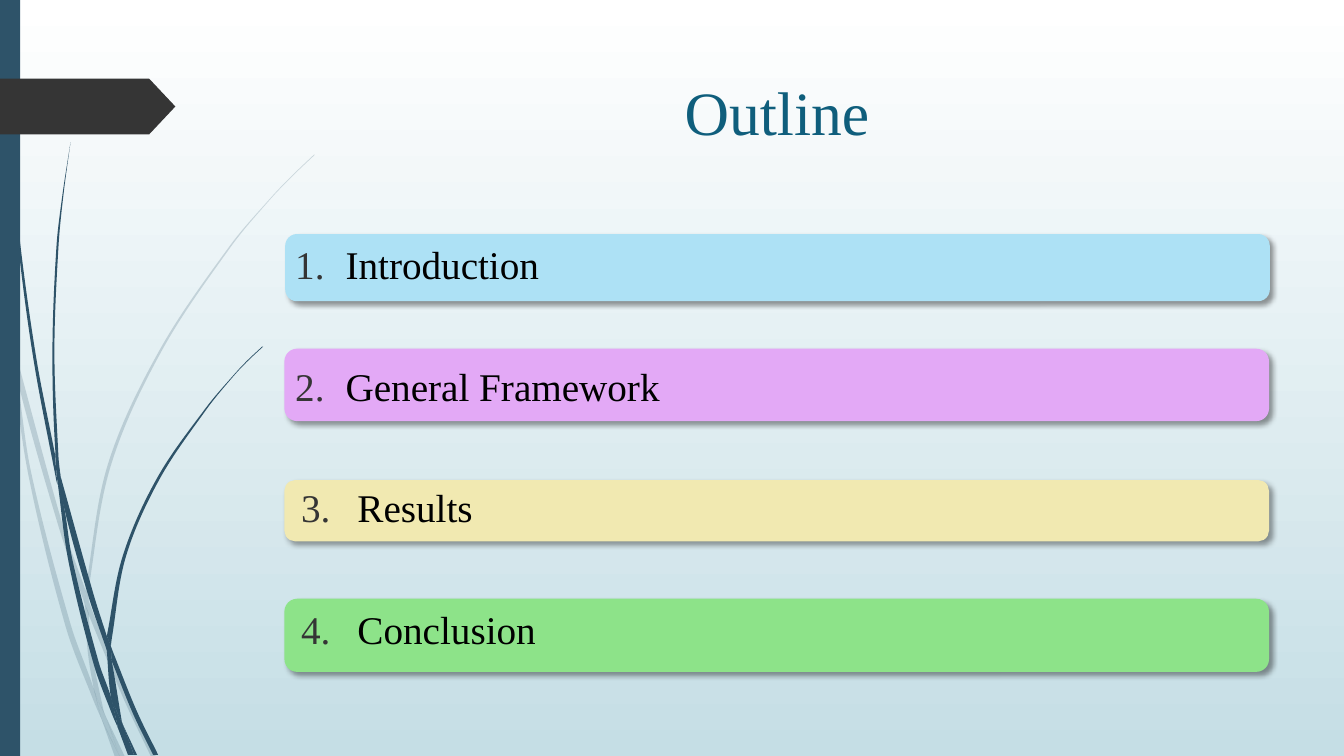
import math

import lxml.etree
import pptx
import pptx.dml.color
import pptx.enum.shapes
import pptx.enum.text
import pptx.oxml
import pptx.oxml.ns
import pptx.util

Cm = pptx.util.Cm
Pt = pptx.util.Pt
SHAPES = pptx.enum.shapes.MSO_SHAPE
qn = pptx.oxml.ns.qn

COLORS = {
    "sky": "FFFFFF", "mist": "C5DEE5", "stem": "2E5369", "tag": "353535",
    "title": "0F5E7C", "text": "000000", "shadow": "000000",
    "blue": "ADE1F5", "violet": "E3A9F6", "sand": "F1E9B1", "green": "8DE389",
}
TOPICS = ["Introduction", "General Framework", "Results", "Conclusion"]
BANDS = [
    ("blue", 7.21, 5.92, 1.65), ("violet", 7.19, 8.81, 1.78),
    ("sand", 7.19, 12.12, 1.5), ("green", 7.19, 15.11, 1.8),
]
INDENTS = [(1.27, 1.27), (1.27, 1.27), (1.57, 1.42), (1.57, 1.42)]
BLADE_UNIT = Cm(0.0254)
PALE_BLADES = [
    ([(0, 299), (10, 344), (11, 350)], [(0, 282), (9, 322), (11, 350)]),
    ([(14, 345), (17, 376), (58, 522), (84, 599)], [(14, 345), (62, 520), (85, 586)]),
    ([(88, 610), (123, 694), (150, 751)], [(88, 596), (92, 607), (127, 692), (155, 751)]),
    ([(105, 711), (119, 751)], [(105, 711), (124, 751)]),
    ([(11, 350), (28, 470), (65, 621), (92, 693), (101, 714)],
     [(11, 350), (17, 376), (31, 469), (70, 619), (93, 683), (99, 707), (101, 714)]),
    ([(84, 599), (87, 646), (93, 683), (96, 692), (105, 711)],
     [(88, 608), (91, 646), (103, 706), (105, 711)]),
    ([(312, 153), (289, 175), (268, 197), (228, 244), (158, 348), (107, 461), (85, 584), (85, 586)],
     [(312, 154), (290, 175), (268, 198), (229, 245), (160, 349), (110, 462), (88, 584), (88, 596)]),
    ([(101, 714), (114, 751)], [(101, 714), (119, 751)]),
    ([(85, 586), (84, 599)], [(88, 596), (88, 610)]),
    ([(93, 683), (99, 707), (101, 714), (119, 751)], [(93, 683), (96, 692), (105, 711), (119, 751)]),
]
DARK_BLADES = [
    ([(3, 0), (4, 48), (7, 110), (17, 233), (33, 355), (56, 477), (57, 481)],
     [(4, 0), (5, 48), (8, 109), (19, 232), (36, 355), (55, 453), (55, 457), (57, 481)]),
    ([(60, 472), (64, 505), (88, 592), (106, 645)], [(60, 472), (93, 590), (106, 631)]),
    ([(111, 656), (132, 708), (152, 749)], [(110, 641), (113, 649), (136, 706), (157, 749)]),
    ([(57, 477), (68, 557), (93, 659), (111, 708), (117, 722)],
     [(57, 477), (64, 505), (72, 556), (98, 657), (110, 691), (116, 717), (117, 722)]),
    ([(70, 141), (62, 193), (56, 245), (52, 349), (55, 449), (60, 472)],
     [(70, 141), (63, 193), (58, 245), (54, 349), (58, 453), (60, 472)]),
    ([(122, 719), (133, 749)], [(122, 719), (136, 749)]),
    ([(55, 449), (55, 453), (57, 477), (64, 505)], [(55, 449), (60, 472), (64, 505)]),
    ([(260, 344), (245, 358), (231, 373), (204, 405), (156, 474), (122, 551), (106, 631)],
     [(261, 344), (245, 359), (231, 374), (205, 406), (158, 476), (125, 552), (111, 633), (110, 641)]),
    ([(117, 722), (127, 749)], [(117, 722), (131, 749)]),
    ([(106, 645), (110, 691), (116, 706), (122, 719)],
     [(106, 645), (109, 651), (111, 656), (121, 716), (122, 719)]),
    ([(106, 631), (106, 645), (111, 656)], [(106, 631), (110, 641), (111, 656)]),
    ([(110, 691), (116, 717), (117, 722), (130, 749)], [(110, 691), (116, 706), (122, 719), (133, 749)]),
]


def handle(before, node, after, reach):
    dx, dy = after[0] - before[0], after[1] - before[1]
    ratio = reach / 3 / math.hypot(dx, dy)
    return node[0] + dx * ratio, node[1] + dy * ratio


class OutlineSlide:
    def __init__(self, deck, font_name):
        self.slide = deck.slides.add_slide(deck.slide_layouts[6])
        self.font_name = font_name

    def color(self, name):
        return pptx.dml.color.RGBColor.from_string(COLORS[name])

    def background(self, top, bottom):
        fill = self.slide.background.fill
        fill.gradient()
        fill.gradient_angle = 270
        for stop, name in zip(fill.gradient_stops, (top, bottom)):
            stop.color.rgb = self.color(name)

    def paint(self, shape, name):
        shape.shadow.inherit = False
        shape.fill.solid()
        shape.fill.fore_color.rgb = self.color(name)
        shape.line.fill.background()

    def block(self, preset, name, box):
        block = self.slide.shapes.add_shape(preset, *map(Cm, box))
        self.paint(block, name)
        return block

    def blade(self, left_edge, right_edge, opacity):
        contour = [(x * BLADE_UNIT, y * BLADE_UNIT) for x, y in left_edge + right_edge[::-1]]
        builder = self.slide.shapes.build_freeform(*contour[0])
        builder.add_line_segments(contour[1:])
        blade = builder.convert_to_shape()
        self.paint(blade, "stem")
        outline = blade._element.find(".//" + qn("a:path"))
        nodes = [(int(pt.get("x")), int(pt.get("y"))) for pt in outline.iter(qn("a:pt"))]
        turn = len(left_edge)
        self.bend(outline, nodes[:turn], 1)
        self.bend(outline, nodes[turn:], turn + 1)
        if opacity < 100:
            tint = blade._element.spPr.find(".//" + qn("a:srgbClr"))
            lxml.etree.SubElement(tint, qn("a:alpha"), val=str(opacity * 1000))

    def bend(self, outline, edge, first):
        padded = [edge[0], *edge, edge[-1]]
        for index, (a, b, c, d) in enumerate(zip(padded, padded[1:], padded[2:], padded[3:])):
            reach = math.dist(b, c)
            curve = lxml.etree.Element(qn("a:cubicBezTo"))
            for x, y in (handle(a, b, c, reach), handle(d, c, b, reach), c):
                lxml.etree.SubElement(curve, qn("a:pt"), x=str(round(x)), y=str(round(y)))
            outline[first + index] = curve

    def band(self, name, box):
        band = self.block(SHAPES.ROUNDED_RECTANGLE, name, box)
        band.line.color.rgb = self.color(name)
        band.line.width = Pt(1.25)
        effects = band._element.spPr.find(qn("a:effectLst"))
        shadow = lxml.etree.SubElement(
            effects, qn("a:outerShdw"), blurRad=str(Pt(4)), dist=str(Pt(3)),
            dir="2700000", algn="tl", rotWithShape="0")
        tint = lxml.etree.SubElement(shadow, qn("a:srgbClr"), val=COLORS["shadow"])
        lxml.etree.SubElement(tint, qn("a:alpha"), val="40000")

    def text(self, box, lines, size, name, layout, indents=()):
        frame = self.slide.shapes.add_textbox(*map(Cm, box)).text_frame
        frame.word_wrap = True
        for number, line in enumerate(lines):
            paragraph = frame.paragraphs[0] if number == 0 else frame.add_paragraph()
            paragraph.text = line
            if indents:
                self.number(paragraph, number + 1, *indents[number])
            settings = layout if number else {**layout, "space_before": Pt(0)}
            for key, value in settings.items():
                setattr(paragraph, key, value)
            font = paragraph.runs[0].font
            for key, value in {"name": self.font_name, "size": Pt(size)}.items():
                setattr(font, key, value)
            font.color.rgb = self.color(name)

    def number(self, paragraph, start, margin, hanging):
        props = paragraph._p.get_or_add_pPr()
        props.set("marL", str(Cm(margin)))
        props.set("indent", str(-Cm(hanging)))
        tint = lxml.etree.SubElement(props, qn("a:buClr"))
        lxml.etree.SubElement(tint, qn("a:srgbClr"), val=COLORS["tag"])
        lxml.etree.SubElement(props, qn("a:buFont"), typeface=self.font_name)
        lxml.etree.SubElement(props, qn("a:buAutoNum"), type="arabicPeriod", startAt=str(start))


def main():
    deck = pptx.Presentation()
    deck.slide_width, deck.slide_height = Cm(33.87), Cm(19.05)
    outline = OutlineSlide(deck, "Times New Roman")
    outline.background("sky", "mist")
    for blades, opacity in ((PALE_BLADES, 20), (DARK_BLADES, 100)):
        for left_edge, right_edge in blades:
            outline.blade(left_edge, right_edge, opacity)
    outline.block(SHAPES.RECTANGLE, "stem", (0, 0, 0.51, 19.05))
    tag = outline.block(SHAPES.PENTAGON, "tag", (0, 1.98, 4.42, 1.41))
    tag.adjustments[0] = 0.47
    for name, left, top, height in reversed(BANDS):
        outline.band(name, (left, top, 24.77, height))
    outline.text((7.2, 1.73, 24.77, 3.56), ["Outline"], 44, "title",
                 {"alignment": pptx.enum.text.PP_ALIGN.CENTER})
    outline.text((7.19, 5.92, 24.77, 11), TOPICS, 28, "text",
                 {"space_before": Pt(53.5)}, INDENTS)
    deck.save("out.pptx")


if __name__ == "__main__":
    main()
